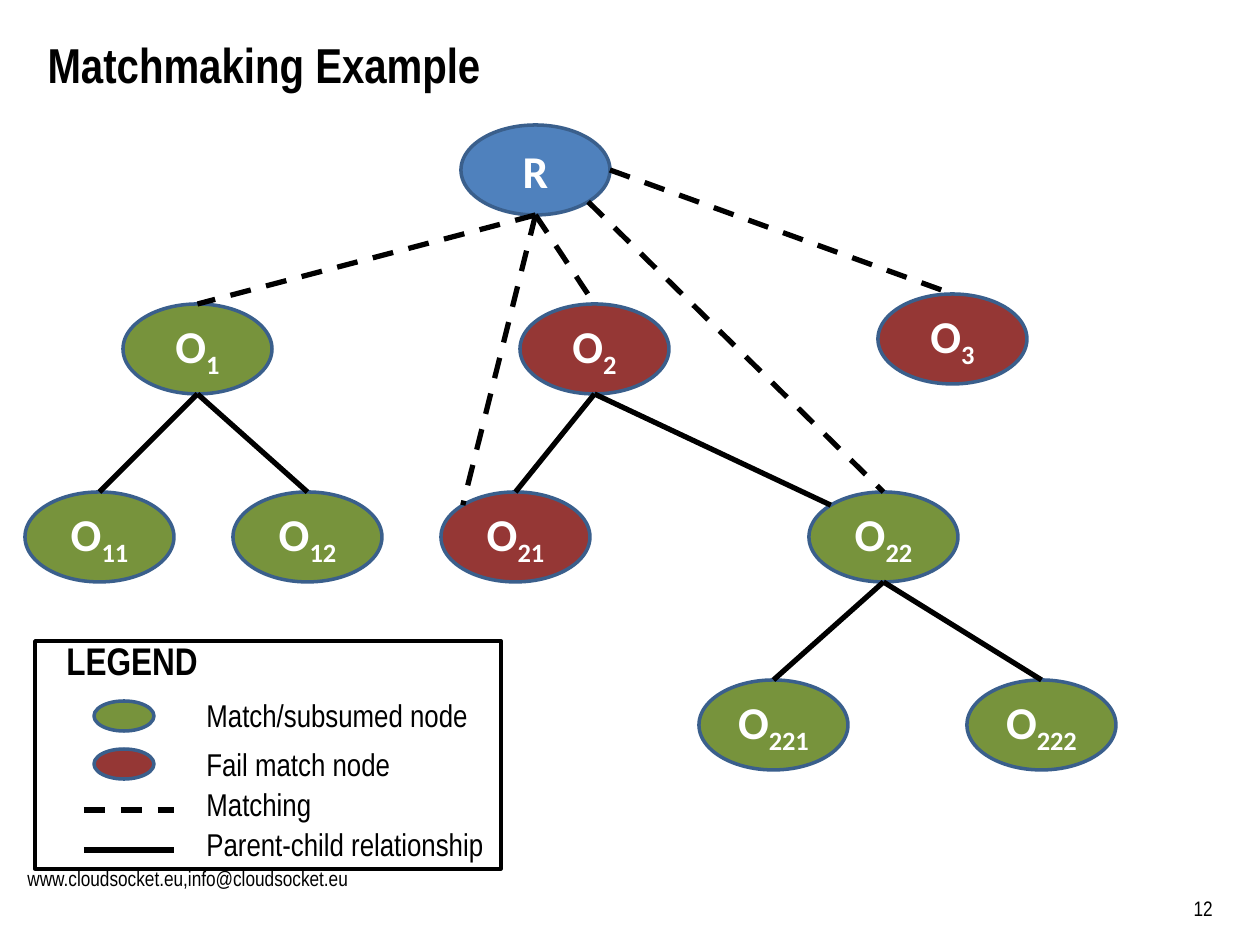
from pptx import Presentation
from pptx.dml.color import RGBColor
from pptx.enum.dml import MSO_LINE_DASH_STYLE as Dash
from pptx.enum.shapes import MSO_CONNECTOR as Link, MSO_SHAPE as Shape
from pptx.enum.text import MSO_ANCHOR as Anchor, PP_ALIGN as Align
from pptx.oxml.ns import qn
from pptx.util import Emu, Pt
from lxml.etree import SubElement

PX = 914400 / 126
COLORS = {"root": "4F81BD", "match": "77933C", "fail": "953735",
          "rim": "3A5F8C", "ink": "000000", "light": "FFFFFF"}
NODE_SIZE = (149, 90)
DIAGONAL = 0.3536  # half of the cosine of 45 degrees

# Points on a node, as shares of its width and height
SITES = {"top": (0.5, 0), "bottom": (0.5, 1), "right": (1, 0.5),
         "top left": (0.5 - DIAGONAL, 0.5 - DIAGONAL),
         "bottom right": (0.5 + DIAGONAL, 0.5 + DIAGONAL)}

# Name: left, top, kind
NODES = {"R": (461, 125, "root"),
         "O1": (123, 304, "match"), "O2": (520, 304, "fail"), "O3": (878, 294, "fail"),
         "O11": (25, 492, "match"), "O12": (233, 492, "match"),
         "O21": (441, 492, "fail"), "O22": (809, 492, "match"),
         "O221": (699, 680, "match"), "O222": (967, 680, "match")}

# Parent, its site, child, its site
CHILD_LINKS = [("O1", "bottom", "O11", "top"), ("O1", "bottom", "O12", "top"),
               ("O2", "bottom", "O21", "top"), ("O2", "bottom", "O22", "top left"),
               ("O22", "bottom", "O221", "top"), ("O22", "bottom", "O222", "top")]
MATCH_LINKS = [("R", "bottom", "O1", "top"), ("R", "bottom", "O2", "top"),
               ("R", "right", "O3", "top"), ("R", "bottom", "O21", "top left"),
               ("R", "bottom right", "O22", "top")]


def emu(*lengths):
    return [Emu(round(length * PX)) for length in lengths]


def color(name):
    return RGBColor.from_string(COLORS[name])


def add_span(para, text, size, face="Arial Narrow", ink="ink", bold=False):
    span = para.add_run()
    span.text = text
    values = {"name": face, "size": Pt(size), "bold": bold}
    for key, value in values.items():
        setattr(span.font, key, value)
    span.font.color.rgb = color(ink)
    return span


def add_label(page, box, text, size, bold=False, align=Align.LEFT, anchor=Anchor.TOP):
    frame = page.shapes.add_textbox(*emu(*box)).text_frame
    frame.word_wrap = True
    frame.vertical_anchor = anchor
    frame.paragraphs[0].alignment = align
    add_span(frame.paragraphs[0], text, size, bold=bold)


def add_outline(page, kind, box, fill, rim):
    shape = page.shapes.add_shape(kind, *emu(*box))
    shape.shadow.inherit = False
    if fill:
        shape.fill.solid()
        shape.fill.fore_color.rgb = color(fill)
    else:
        shape.fill.background()
    shape.line.color.rgb = color(rim)
    shape.line.width = Pt(2)
    return shape


def add_line(page, start, end, dashed=False):
    line = page.shapes.add_connector(Link.STRAIGHT, *emu(*start, *end))
    line.line.color.rgb = color("ink")
    line.line.width = Pt(3)
    if dashed:
        line.line.dash_style = Dash.DASH
    SubElement(line._element.spPr, qn("a:effectLst"))


def add_title(page, box, text):
    title = page.shapes.title
    for key, value in zip(("left", "top", "width", "height"), emu(*box)):
        setattr(title, key, value)
    title.text_frame.vertical_anchor = Anchor.TOP
    para = title.text_frame.paragraphs[0]
    para.alignment = Align.LEFT
    add_span(para, text, 28, bold=True)


def add_node(page, name, left, top, kind):
    node = add_outline(page, Shape.OVAL, (left, top, *NODE_SIZE), kind, "rim")
    node.text_frame.vertical_anchor = Anchor.MIDDLE
    para = node.text_frame.paragraphs[0]
    para.alignment = Align.CENTER
    letter, index = name[0], name[1:]
    add_span(para, letter, 26, "Calibri", "light", True)
    if index:
        span = add_span(para, index, 26, "Calibri", "light", True)
        span.font._element.set("baseline", "-25000")


def site_point(name, site):
    corner = NODES[name][:2]
    return [start + size * share
            for start, size, share in zip(corner, NODE_SIZE, SITES[site])]


def add_tree(page):
    for name, place in NODES.items():
        add_node(page, name, *place)
    for links, dashed in ((CHILD_LINKS, False), (MATCH_LINKS, True)):
        for parent, parent_site, child, child_site in links:
            add_line(page, site_point(parent, parent_site),
                     site_point(child, child_site), dashed)


def add_legend(page, box):
    left, top, width, height = box
    add_label(page, (left + 19, top - 10, 427, 59), "LEGEND", 22, bold=True)
    # Node keys: text, key top, text top
    for kind, text, key_top, text_top in (("match", "Match/subsumed node", 60, 49),
                                          ("fail", "Fail match node", 108, 98)):
        add_outline(page, Shape.OVAL, (left + 59, top + key_top, 60, 30), kind, "rim")
        add_label(page, (left + 159, top + text_top, 308, 50), text, 18)
    # Line keys
    for dashed, text, key_top, text_top in ((True, "Matching", 169, 138),
                                            (False, "Parent-child relationship", 209, 178)):
        add_line(page, (left + 49, top + key_top), (left + 139, top + key_top), dashed)
        add_label(page, (left + 159, top + text_top, 308, 50), text, 18)
    add_outline(page, Shape.RECTANGLE, box, None, "ink")


def add_footer(page, box):
    left, top, width, height = box
    add_label(page, (left, top + 2, 358, 63), "www.cloudsocket.eu,info@cloudsocket.eu", 12)
    add_label(page, (left + width - 357, top, 357, height), "12", 12,
              align=Align.RIGHT, anchor=Anchor.BOTTOM)


def main():
    deck = Presentation()
    deck.slide_width, deck.slide_height = emu(1260, 945)
    page = deck.slides.add_slide(deck.slide_layouts[5])
    add_title(page, (35, 28, 1191, 127), "Matchmaking Example")
    add_tree(page)
    add_legend(page, (35, 641, 466, 228))
    add_footer(page, (15, 857, 1210, 70))
    deck.save("out.pptx")


if __name__ == "__main__":
    main()
